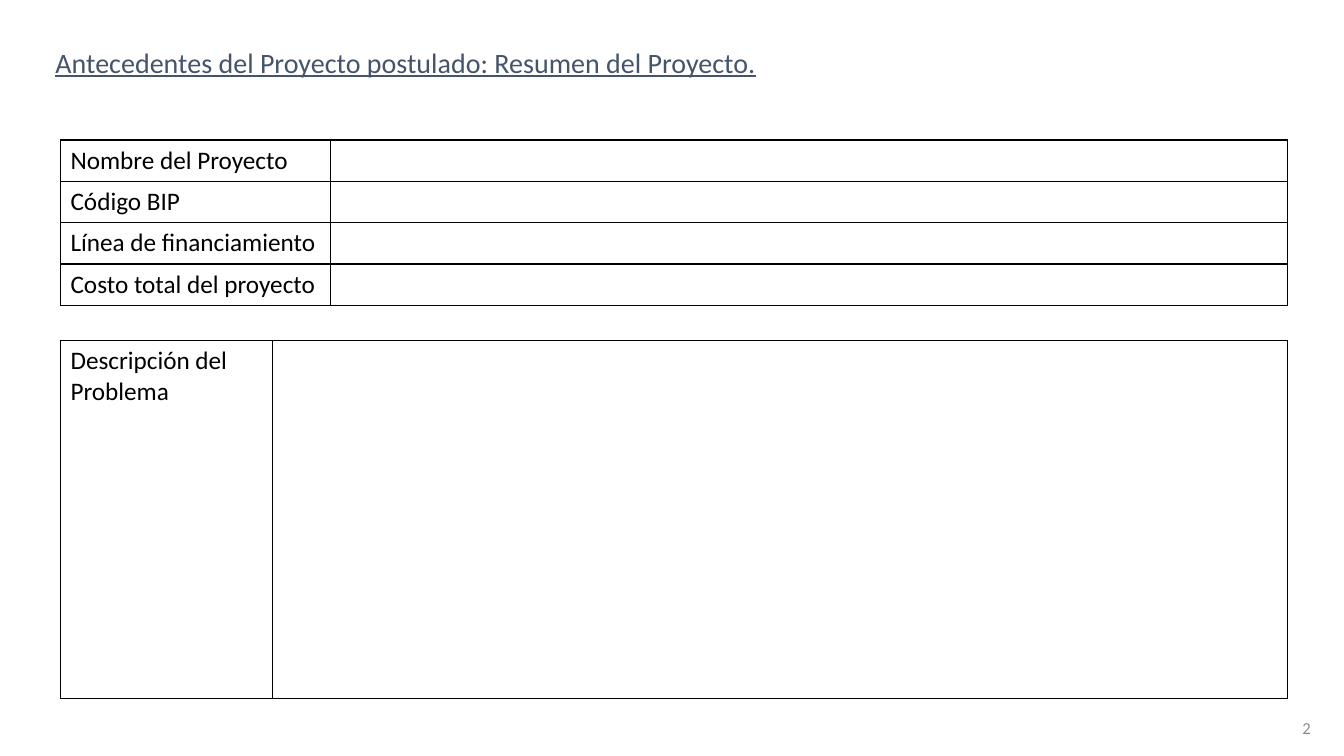
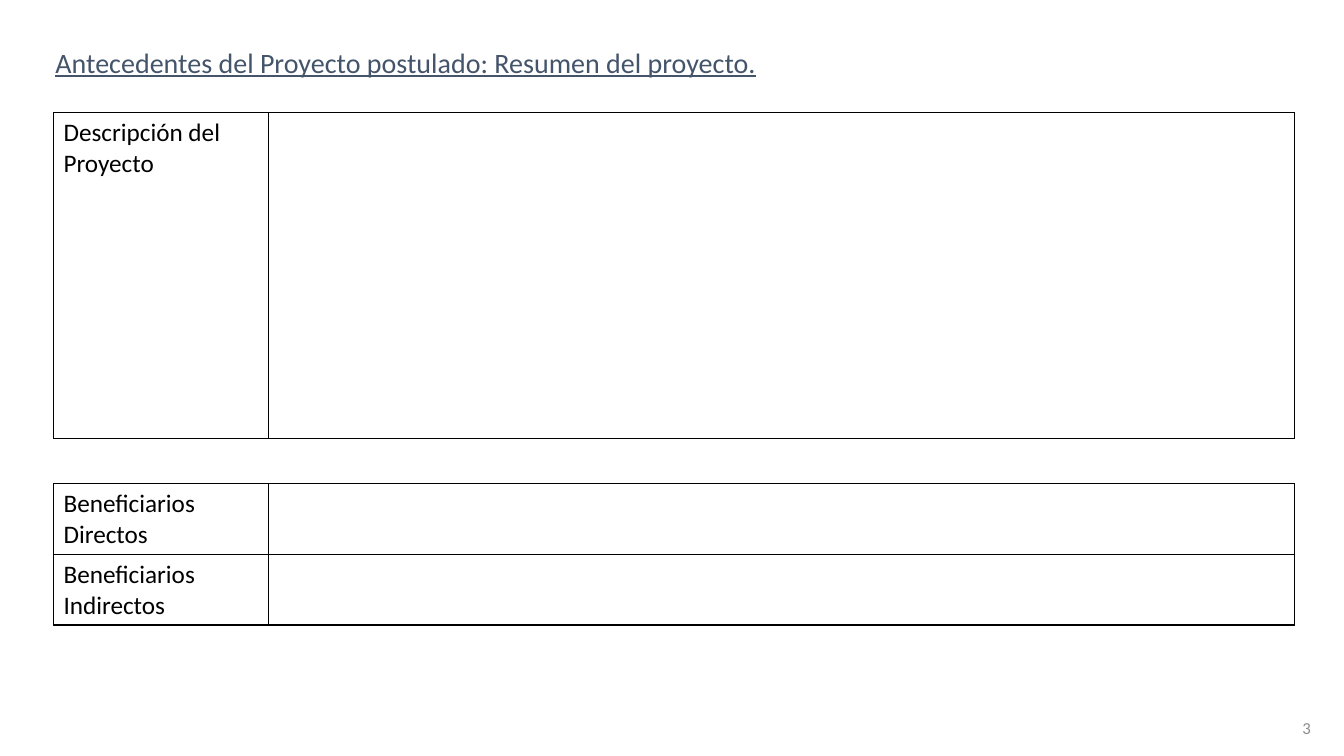
import pptx
import pptx.util
import pptx.dml.color
import pptx.enum.text
import pptx.oxml
import pptx.oxml.ns

WIDE, HIGH = pptx.util.Inches(13.33), pptx.util.Inches(7.5)
FONT = "Calibri"
INK, SLATE, GREY = "000000", "44546A", "8C8C8C"
ALIGN = pptx.enum.text.PP_ALIGN
ANCHOR = pptx.enum.text.MSO_ANCHOR

# Boxes are left, top, width, height in percent of the slide
HEAD = (3.38, 5.33, 86.72, 5.87)
FOOT = (75.77, 93.6, 22.5, 5.33)

# Each page: number, title, tables as (box, label share, labels)
PAGES = [
    (2, "Antecedentes del Proyecto postulado: Resumen del Proyecto.", [
        ((4.5, 18.53, 91.3, 21.87), 22, [
            "Nombre del Proyecto", "Código BIP",
            "Línea de financiamiento", "Costo total del proyecto"]),
        ((4.5, 45.07, 91.3, 47.33), 17.26, ["Descripción del Problema"]),
    ]),
    (3, "Antecedentes del Proyecto postulado: Resumen del proyecto.", [
        ((3.98, 14.93, 92.35, 43.07), 17.3, ["Descripción del Proyecto"]),
        ((3.98, 64, 92.35, 18.67), 17.3, [
            "Beneficiarios Directos", "Beneficiarios Indirectos"]),
    ]),
]


def color(code):
    return pptx.dml.color.RGBColor.from_string(code)


def scale(box):
    """Turn percent shares into slide lengths."""
    return [int(part * side / 100)
            for part, side in zip(box, (WIDE, HIGH, WIDE, HIGH))]


def write(frame, text, size=18, ink=INK, align=ALIGN.LEFT,
          anchor=ANCHOR.TOP, under=False):
    frame.word_wrap = True
    frame.vertical_anchor = anchor
    line = frame.paragraphs[0]
    line.alignment = align
    run = line.add_run()
    run.text = text
    run.font.name = FONT
    run.font.size = pptx.util.Pt(size)
    run.font.color.rgb = color(ink)
    run.font.underline = under


def frame_cell(cell, ink=INK, width=1):
    """Clear the fill and rule all four sides."""
    cell.fill.background()
    props = cell._tc.get_or_add_tcPr()
    for spot, side in enumerate(("lnL", "lnR", "lnT", "lnB")):
        props.insert(spot, pptx.oxml.parse_xml(
            f'<a:{side} {pptx.oxml.ns.nsdecls("a")} '
            f'w="{pptx.util.Pt(width)}"><a:solidFill>'
            f'<a:srgbClr val="{ink}"/></a:solidFill></a:{side}>'))


def add_form(slide, box, share, labels):
    """Table with a label column and an empty answer column."""
    left, top, width, height = scale(box)
    grid = slide.shapes.add_table(
        len(labels), 2, left, top, width, height).table
    grid.first_row = grid.horz_banding = False
    first = int(width * share / 100)
    grid.columns[0].width = first
    grid.columns[1].width = width - first
    for row, label in enumerate(labels):
        grid.rows[row].height = height // len(labels)
        write(grid.cell(row, 0).text_frame, label)
        for col in range(2):
            frame_cell(grid.cell(row, col))


def add_head(slide, box, text):
    title = slide.shapes.title
    title.left, title.top, title.width, title.height = scale(box)
    title.text_frame.auto_size = pptx.enum.text.MSO_AUTO_SIZE.NONE
    write(title.text_frame, text, size=20, ink=SLATE,
          align=ALIGN.JUSTIFY, under=True)


def add_foot(slide, box, number):
    note = slide.shapes.add_textbox(*scale(box))
    write(note.text_frame, str(number), size=12, ink=GREY,
          align=ALIGN.RIGHT, anchor=ANCHOR.MIDDLE)


def add_page(deck, number, title, forms):
    slide = deck.slides.add_slide(deck.slide_layouts[5])
    add_foot(slide, FOOT, number)
    add_head(slide, HEAD, title)
    for form in forms:
        add_form(slide, *form)


def main():
    deck = pptx.Presentation()
    deck.slide_width, deck.slide_height = WIDE, HIGH
    for page in PAGES:
        add_page(deck, *page)
    deck.save("out.pptx")


if __name__ == "__main__":
    main()
